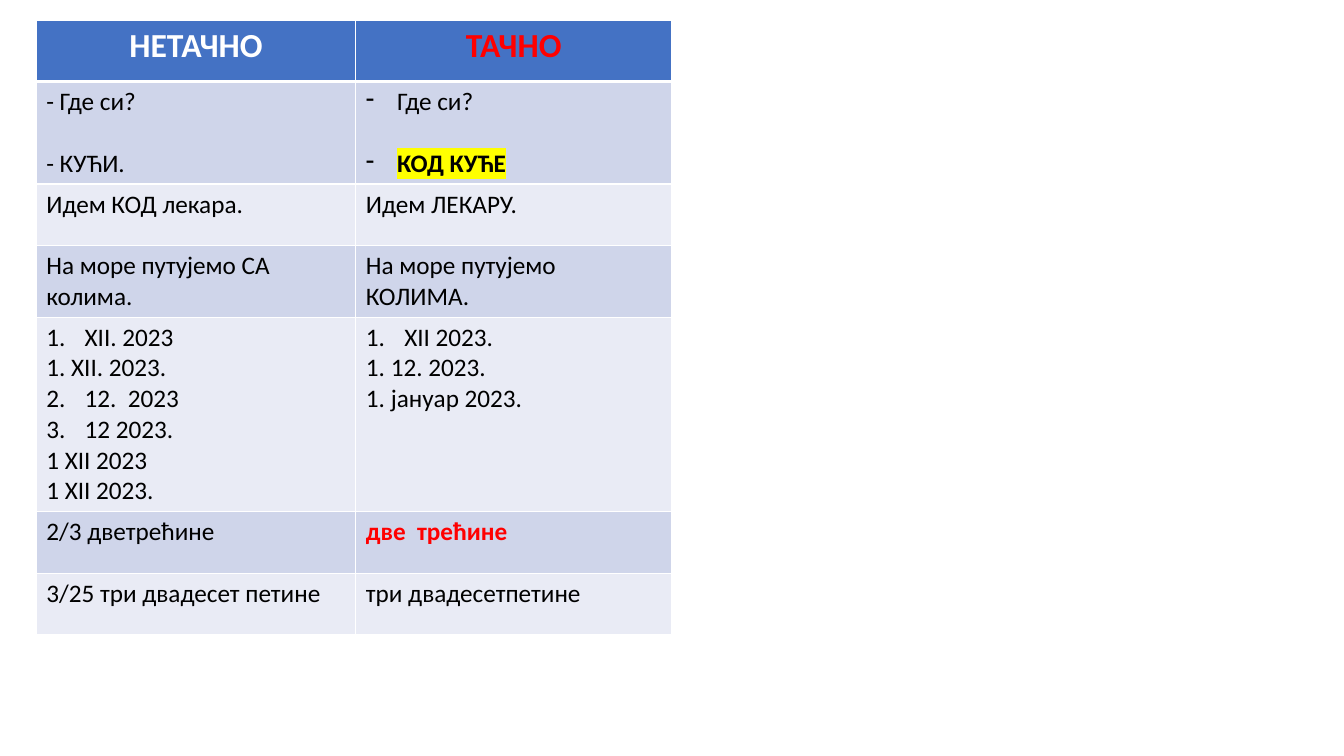
from lxml.etree import SubElement
from pptx import Presentation
from pptx.dml.color import RGBColor
from pptx.enum.text import PP_ALIGN
from pptx.oxml.ns import qn
from pptx.util import Inches, Pt

ROW_HEIGHTS = [0.61, 1.01, 0.61, 0.71, 1.93, 0.61, 0.61]
COL_WIDTHS = [3.17, 3.13]
BANDS = ["E9EBF5", "CFD5EA"]
HEADER_FILL = "4472C4"

DASH = dict(bullet="-", indent=0.31)
NUMBER = dict(bullet="1.", indent=0.38)
HEADING = dict(size=24, bold=True, align=PP_ALIGN.CENTER)
GAP = dict(before=22)

ROWS = [
    ([("НЕТАЧНО", dict(HEADING, color="FFFFFF"))],
     [("ТАЧНО", dict(HEADING, color="FF0000"))]),
    ([("- Где си?", {}), ("- КУЋИ.", GAP)],
     [("Где си?", DASH), ("КОД КУЋЕ", dict(DASH, **GAP, bold=True, highlight="FFFF00"))]),
    ([("Идем КОД лекара.", {})], [("Идем ЛЕКАРУ.", {})]),
    ([("На море путујемо СА колима.", {})], [("На море путујемо КОЛИМА.", {})]),
    ([("XII. 2023", NUMBER), ("1. XII. 2023.", {}), ("12.  2023", NUMBER),
      ("12 2023.", NUMBER), ("1 XII 2023", {}), ("1 XII 2023.", {})],
     [("XII 2023.", NUMBER), ("1. 12. 2023.", {}), ("1. јануар 2023.", {})]),
    ([("2/3 дветрећине", {})], [("две  трећине", dict(color="FF0000", bold=True))]),
    ([("3/25 три двадесет петине", {})], [("три двадесетпетине", {})]),
]


def rgb(color):
    """Return the colour for a hex string."""
    return RGBColor.from_string(color)


def set_bullet(p, bullet, indent):
    """Give a paragraph a dash or an automatic number with a hanging indent."""
    pPr = p._p.get_or_add_pPr()
    pPr.set("marL", str(Inches(indent)))
    pPr.set("indent", str(-Inches(indent)))
    if bullet == "1.":
        SubElement(pPr, qn("a:buFont"), typeface="+mj-lt")
        SubElement(pPr, qn("a:buAutoNum"), type="arabicPeriod")
    else:
        SubElement(pPr, qn("a:buFontTx"))
        SubElement(pPr, qn("a:buChar"), char=bullet)


def write(p, text, size=18, color="000000", bold=False, align=PP_ALIGN.LEFT,
          before=0, bullet=None, indent=0, highlight=None):
    """Write one formatted run into a paragraph."""
    p.alignment = align
    p.space_before = Pt(before)
    if bullet:
        set_bullet(p, bullet, indent)
    r = p.add_run()
    r.text = text
    r.font.size = Pt(size)
    r.font.bold = bold
    r.font.color.rgb = rgb(color)
    if highlight:
        mark = SubElement(r._r.get_or_add_rPr(), qn("a:highlight"))
        SubElement(mark, qn("a:srgbClr"), val=highlight)
    r.font.name = "Calibri"


def set_borders(cell, top=1, bottom=1):
    """Draw white borders round a cell, with widths in points."""
    tcPr = cell._tc.get_or_add_tcPr()
    for side, width in dict(L=1, R=1, T=top, B=bottom).items():
        ln = SubElement(tcPr, qn(f"a:ln{side}"), w=str(Pt(width)))
        fill = SubElement(ln, qn("a:solidFill"))
        SubElement(fill, qn("a:srgbClr"), val="FFFFFF")


def add_comparison(slide, left, top):
    """Place the table of wrong and right forms at the given corner."""
    frame = slide.shapes.add_table(
        len(ROWS), len(COL_WIDTHS), Inches(left), Inches(top),
        Inches(sum(COL_WIDTHS)), Inches(sum(ROW_HEIGHTS)))
    table = frame.table
    for col, width in zip(table.columns, COL_WIDTHS):
        col.width = Inches(width)
    for i, (row, height) in enumerate(zip(table.rows, ROW_HEIGHTS)):
        row.height = Inches(height)
        for cell, lines in zip(row.cells, ROWS[i]):
            set_borders(cell, top=3 if i == 1 else 1, bottom=3 if i == 0 else 1)
            cell.fill.solid()
            cell.fill.fore_color.rgb = rgb(BANDS[i % 2] if i else HEADER_FILL)
            tf = cell.text_frame
            for n, (text, style) in enumerate(lines):
                write(tf.add_paragraph() if n else tf.paragraphs[0], text, **style)


def main():
    """Build and save the slide."""
    prs = Presentation()
    prs.slide_width, prs.slide_height = Inches(13.33), Inches(7.5)
    slide = prs.slides.add_slide(prs.slide_layouts[6])
    add_comparison(slide, 0.36, 0.2)
    prs.save("out.pptx")


if __name__ == "__main__":
    main()
